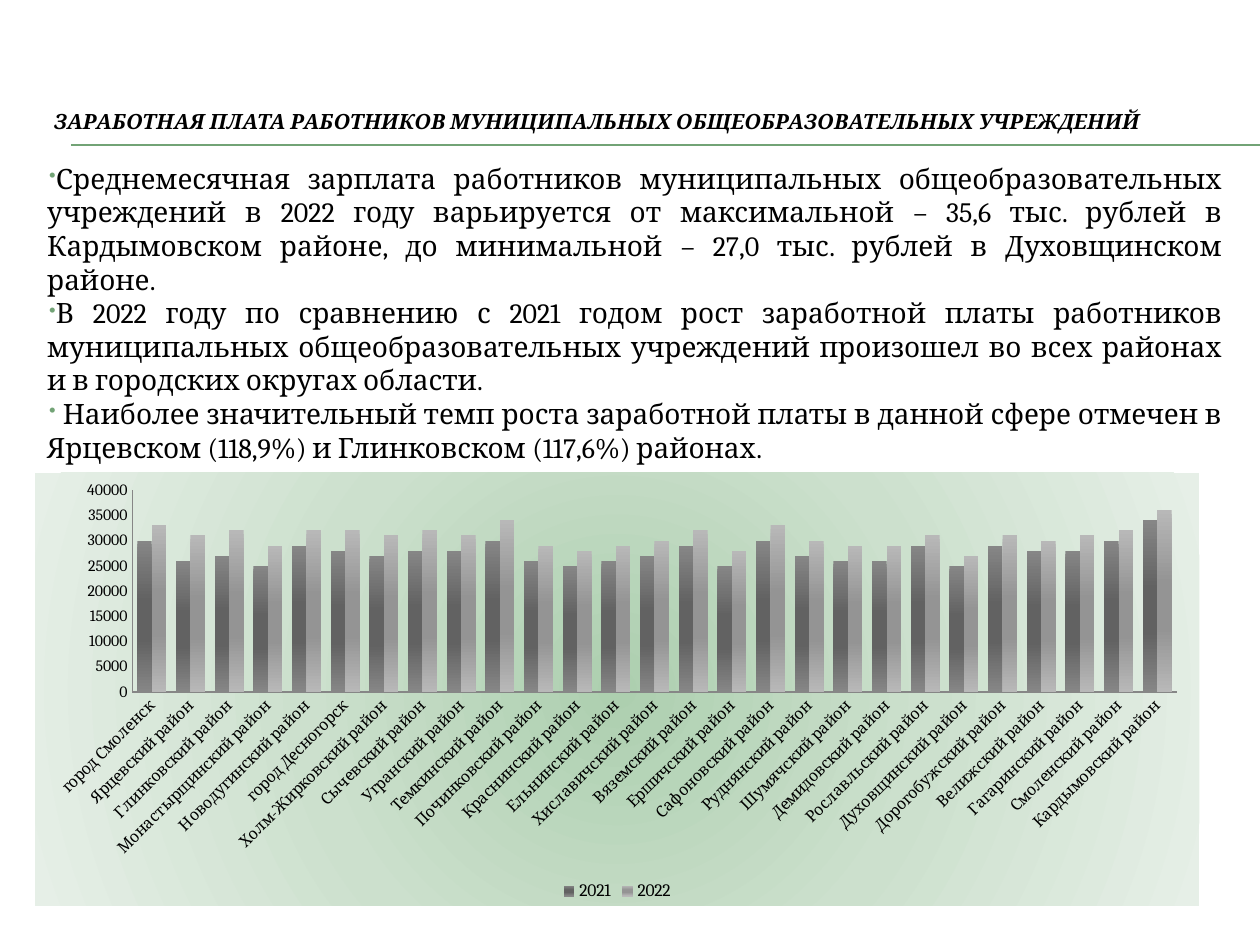
from typing import NamedTuple

from lxml import etree
from pptx import Presentation
from pptx.chart.data import CategoryChartData
from pptx.dml.color import RGBColor
from pptx.enum.chart import XL_CHART_TYPE as ChartType, XL_LEGEND_POSITION as LegendPosition
from pptx.enum.chart import XL_TICK_MARK as TickMark
from pptx.enum.shapes import MSO_CONNECTOR as Connector
from pptx.enum.text import MSO_ANCHOR as Anchor, PP_ALIGN as Align
from pptx.oxml import parse_xml
from pptx.oxml.ns import nsdecls, qn
from pptx.util import Cm, Pt

FONT = "Cambria"
BLACK, GREEN, AXIS_GRAY = "000000", "72A376", "868686"
TITLE = "ЗАРАБОТНАЯ ПЛАТА РАБОТНИКОВ МУНИЦИПАЛЬНЫХ ОБЩЕОБРАЗОВАТЕЛЬНЫХ УЧРЕЖДЕНИЙ"


class Box(NamedTuple):
    left: float
    top: float
    width: float
    height: float


class Wage(NamedTuple):
    place: str
    y2021: int
    y2022: int


class Year(NamedTuple):
    name: str
    stops: list


CHART_BOX = Box(0.71, 9.53, 23.47, 8.73)
PLOT_BOX = Box(1.96, 0.35, 21.05, 4.07)  # inside the chart

FINDINGS = [
    "Среднемесячная зарплата работников муниципальных общеобразовательных "
    "учреждений в 2022 году варьируется от максимальной – 35,6 тыс. рублей "
    "в Кардымовском районе, до минимальной – 27,0 тыс. рублей в Духовщинском районе.",
    "В 2022 году по сравнению с 2021 годом рост заработной платы работников "
    "муниципальных общеобразовательных учреждений произошел во всех районах "
    "и в городских округах области.",
    " Наиболее значительный темп роста заработной платы в данной сфере отмечен "
    "в Ярцевском (118,9%) и Глинковском (117,6%) районах.",
]

WAGES = [
    Wage("город Смоленск", 30000, 33000),
    Wage("Ярцевский район", 26000, 31000),
    Wage("Глинковский район", 27000, 32000),
    Wage("Монастырщинский район", 25000, 29000),
    Wage("Новодугинский район", 29000, 32000),
    Wage("город Десногорск", 28000, 32000),
    Wage("Холм-Жирковский район", 27000, 31000),
    Wage("Сычевский район", 28000, 32000),
    Wage("Угранский район", 28000, 31000),
    Wage("Темкинский район", 30000, 34000),
    Wage("Починковский район", 26000, 29000),
    Wage("Краснинский район", 25000, 28000),
    Wage("Ельнинский район", 26000, 29000),
    Wage("Хиславичский район", 27000, 30000),
    Wage("Вяземский район", 29000, 32000),
    Wage("Ершичский район", 25000, 28000),
    Wage("Сафоновский район", 30000, 33000),
    Wage("Руднянский район", 27000, 30000),
    Wage("Шумячский район", 26000, 29000),
    Wage("Демидовский район", 26000, 29000),
    Wage("Рославльский район", 29000, 31000),
    Wage("Духовщинский район", 25000, 27000),
    Wage("Дорогобужский район", 29000, 31000),
    Wage("Велижский район", 28000, 30000),
    Wage("Гагаринский район", 28000, 31000),
    Wage("Смоленский район", 30000, 32000),
    Wage("Кардымовский район", 34000, 36000),
]

YEARS = [
    Year("2021", [(0, "868686"), (40, "626262"), (65, "626262"), (100, "868686")]),
    Year("2022", [(0, "B8B8B8"), (40, "949494"), (65, "949494"), (100, "B8B8B8")]),
]
BACKDROP = [(0, "ADCFAF"), (50, "CCE0CD"), (100, "E6EFE7")]
RADIAL = '<a:path path="circle"><a:fillToRect l="50000" t="50000" r="50000" b="50000"/></a:path>'
VERTICAL = '<a:lin ang="5400000" scaled="0"/>'


def color(value: str) -> RGBColor:
    return RGBColor.from_string(value)


def set_font(font, size: float, bold: bool = False, italic: bool = False) -> None:
    font.name, font.size, font.bold, font.italic = FONT, Pt(size), bold, italic
    font.color.rgb = color(BLACK)


def gradient(stops: list, direction: str):
    marks = "".join(f'<a:gs pos="{at * 1000}"><a:srgbClr val="{tone}"/></a:gs>' for at, tone in stops)
    return parse_xml(f'<a:gradFill {nsdecls("a")} rotWithShape="1">'
                     f'<a:gsLst>{marks}</a:gsLst>{direction}</a:gradFill>')


def add_rule(page, top: float) -> None:
    rule = page.shapes.add_connector(Connector.STRAIGHT, Cm(1.43), Cm(top), Cm(25.4), Cm(top))
    rule.line.color.rgb = color(GREEN)
    rule.line.width = Pt(0.75)
    etree.SubElement(rule.element.spPr, qn("a:effectLst"))


def add_text_frame(page, box: Box, anchor: Anchor):
    frame = page.shapes.add_textbox(*map(Cm, box)).text_frame
    frame.word_wrap = True
    frame.vertical_anchor = anchor
    return frame


def add_heading(page, box: Box, text: str) -> None:
    para = add_text_frame(page, box, Anchor.MIDDLE).paragraphs[0]
    para.text = text
    set_font(para.font, 12, bold=True, italic=True)
    para.font._element.set("spc", "14")  # slightly widened letters


def add_bullets(page, box: Box, texts: list) -> None:
    frame = add_text_frame(page, box, Anchor.TOP)
    for number, text in enumerate(texts):
        para = frame.add_paragraph() if number else frame.paragraphs[0]
        para.text = text
        para.alignment = Align.JUSTIFY
        props = para._p.get_or_add_pPr()
        props.set("marL", "0")
        props.set("indent", str(Cm(0.04)))
        tint = etree.SubElement(props, qn("a:buClr"))
        etree.SubElement(tint, qn("a:srgbClr"), val=GREEN)
        etree.SubElement(props, qn("a:buSzPct"), val="70000")
        etree.SubElement(props, qn("a:buChar"), char="•")
        set_font(para.font, 16)


def add_wage_chart(page, box: Box, inner: Box) -> None:
    data = CategoryChartData()
    data.categories = [wage.place for wage in WAGES]
    data.add_series(YEARS[0].name, [wage.y2021 for wage in WAGES])
    data.add_series(YEARS[1].name, [wage.y2022 for wage in WAGES])
    chart = page.shapes.add_chart(ChartType.COLUMN_CLUSTERED, *map(Cm, box), data).chart
    chart.has_title = False
    set_font(chart.font, 18)

    # Columns
    plot = chart.plots[0]
    plot.gap_width, plot.overlap, plot.vary_by_categories = 67, 0, False
    for series, year in zip(plot.series, YEARS):
        series.format.line.fill.background()
        series.format.fill.background()
        props = series.format.fill._xPr
        props.replace(props.find(qn("a:noFill")), gradient(year.stops, VERTICAL))

    # Axes and legend
    for axis in (chart.category_axis, chart.value_axis):
        axis.has_major_gridlines = False
        axis.major_tick_mark = axis.minor_tick_mark = TickMark.NONE
        axis.format.line.color.rgb = color(AXIS_GRAY)
        set_font(axis.tick_labels.font, 9)
    slant = chart.category_axis._element.find(qn("c:txPr")).find(qn("a:bodyPr"))
    slant.set("rot", "-2700000")
    chart.value_axis.minimum_scale, chart.value_axis.maximum_scale = 0, 40000
    chart.value_axis.major_unit = 5000
    chart.has_legend = True
    chart.legend.position = LegendPosition.BOTTOM
    chart.legend.include_in_layout = False
    set_font(chart.legend.font, 10)

    # Plot area position, as fractions of the chart
    area = chart._chartSpace.chart.plotArea
    for old in area.findall(qn("c:layout")):
        area.remove(old)
    sides = "".join(f'<c:{tag} val="{value}"/>' for tag, value in (
        ("layoutTarget", "inner"), ("xMode", "edge"), ("yMode", "edge"),
        ("x", inner.left / box.width), ("y", inner.top / box.height),
        ("w", inner.width / box.width), ("h", inner.height / box.height)))
    area.insert(0, parse_xml(f'<c:layout {nsdecls("c")}><c:manualLayout>{sides}</c:manualLayout></c:layout>'))

    # Radial backdrop
    backdrop = parse_xml(f'<c:spPr {nsdecls("c", "a")}><a:ln><a:noFill/></a:ln></c:spPr>')
    backdrop.insert(0, gradient(BACKDROP, RADIAL))
    chart._chartSpace.chart.addnext(backdrop)


def main() -> None:
    deck = Presentation()
    deck.slide_width, deck.slide_height = Cm(25.4), Cm(19.05)
    page = deck.slides.add_slide(deck.slide_layouts[6])

    # Heading with its double rule
    for top in (2.92, 2.94):
        add_rule(page, top)
    add_heading(page, Box(0.84, 1.27, 24.13, 2.34), TITLE)

    # Findings and chart
    add_bullets(page, Box(0.7, 3.13, 24.21, 6.81), FINDINGS)
    add_wage_chart(page, CHART_BOX, PLOT_BOX)
    deck.save("out.pptx")


if __name__ == "__main__":
    main()
